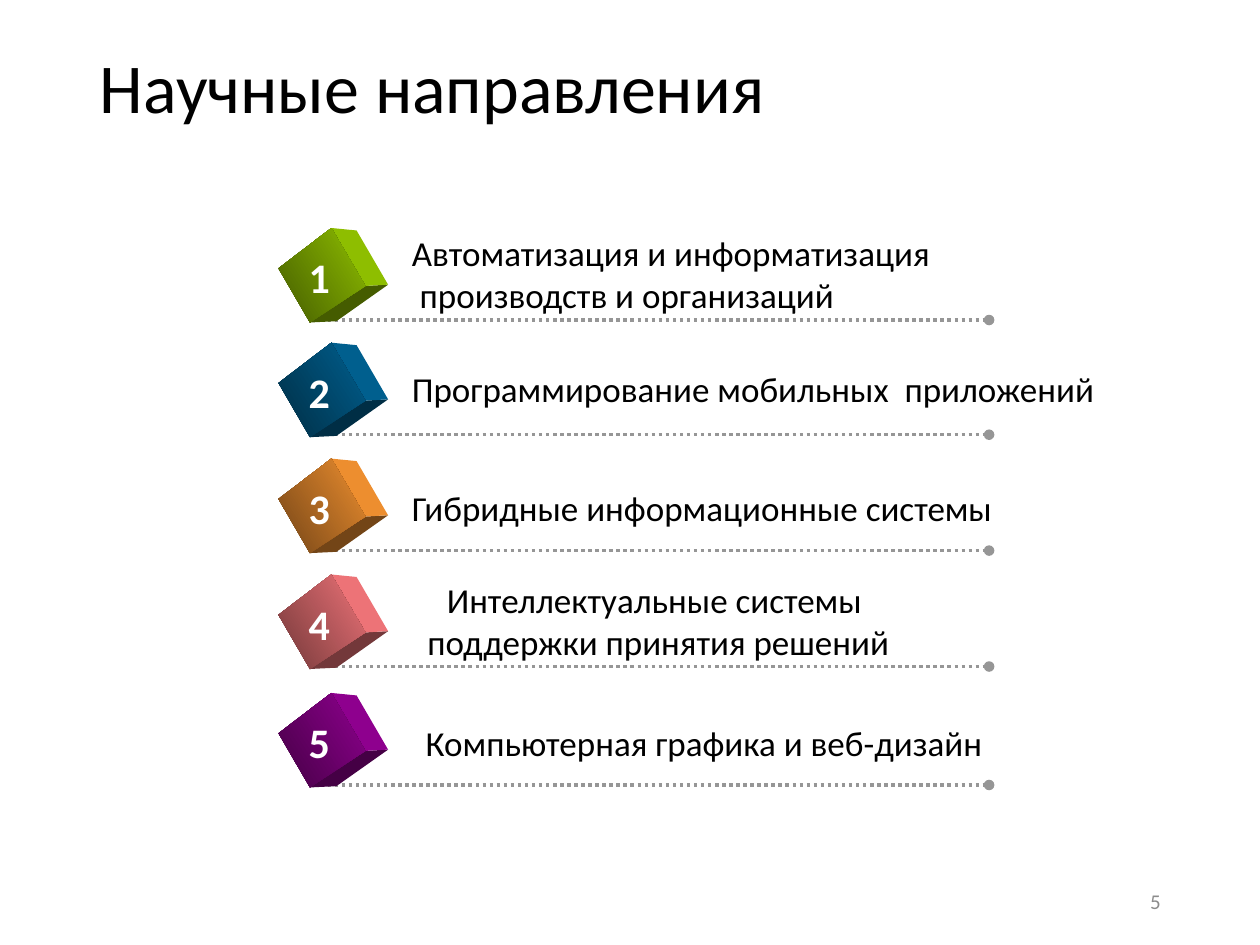
from lxml.etree import SubElement
from pptx import Presentation
from pptx.dml.color import RGBColor
from pptx.enum.dml import MSO_LINE
from pptx.enum.shapes import MSO_CONNECTOR
from pptx.enum.text import MSO_ANCHOR, PP_ALIGN
from pptx.oxml.ns import qn
from pptx.util import Inches, Pt

COLORS = {
    "text": "000000",
    "number": "FFFFFF",
    "rule": "969696",
    "footer": "8C8C8C",
    "green": "99CC00",
    "blue": "006699",
    "orange": "FF9933",
    "pink": "FF7C80",
    "purple": "990099",
}

FRONT = [(2.21, -0.41), (2.63, -0.73), (2.9, -0.27), (2.46, 0.02)]
SIDE = [(2.63, -0.73), (2.83, -0.71), (3.08, -0.28), (2.9, -0.27)]
BOTTOM = [(2.9, -0.27), (3.08, -0.28), (2.67, 0.01), (2.46, 0.02)]

DIRECTIONS = [
    ("green", 2.54, (3.17, 1.79, 4.35, 0.77), PP_ALIGN.LEFT,
     "Автоматизация и информатизация\n производств и организаций"),
    ("blue", 3.45, (3.17, 2.87, 5.66, 0.44), PP_ALIGN.LEFT,
     "Программирование мобильных  приложений"),
    ("orange", 4.37, (3.17, 3.81, 4.81, 0.44), PP_ALIGN.LEFT,
     "Гибридные информационные системы"),
    ("pink", 5.29, (3.28, 4.54, 3.89, 0.77), PP_ALIGN.CENTER,
     "Интеллектуальные системы \nподдержки принятия решений"),
    ("purple", 6.23, (3.28, 5.68, 4.65, 0.44), PP_ALIGN.LEFT,
     "Компьютерная графика и веб-дизайн"),
]


def shade(name, factor):
    channels = RGBColor.from_string(COLORS[name])
    return RGBColor(*(round(channel * factor) for channel in channels))


class SlideBuilder:
    font = "Calibri"

    def __init__(self, slide):
        self.slide = slide

    def format_text(self, frame, size, color, align, bold=False):
        for para in frame.paragraphs:
            para.alignment = align
            for span in para.runs:
                span.font.name = self.font
                span.font.size = Pt(size)
                span.font.bold = bold
                span.font.color.rgb = RGBColor.from_string(COLORS[color])

    def title(self, text, bounds):
        box = self.slide.shapes.title
        box.left, box.top, box.width, box.height = map(Inches, bounds)
        frame = box.text_frame
        frame.text = text
        frame.vertical_anchor = MSO_ANCHOR.MIDDLE
        frame.paragraphs[0].line_spacing = 0.9
        self.format_text(frame, 40, "text", PP_ALIGN.LEFT)

    def text(self, text, bounds, size, color="text", align=PP_ALIGN.LEFT,
             bold=False, wrap=False, anchor=MSO_ANCHOR.TOP):
        frame = self.slide.shapes.add_textbox(*map(Inches, bounds)).text_frame
        frame.word_wrap = wrap
        frame.vertical_anchor = anchor
        frame.text = text
        self.format_text(frame, size, color, align, bold)

    def rule(self, y):
        rule = self.slide.shapes.add_connector(
            MSO_CONNECTOR.STRAIGHT, Inches(2.6), Inches(y), Inches(7.85), Inches(y))
        rule.line.color.rgb = RGBColor.from_string(COLORS["rule"])
        rule.line.width = Pt(2)
        rule.line.dash_style = MSO_LINE.ROUND_DOT
        properties = rule._element.spPr
        SubElement(properties.find(qn("a:ln")), qn("a:tailEnd"), type="oval")
        SubElement(properties, qn("a:effectLst"))

    def face(self, corners, y, color, shades):
        points = [(Inches(x), Inches(y + offset)) for x, offset in corners]
        outline = self.slide.shapes.build_freeform(*points[0])
        outline.add_line_segments(points[1:], close=True)
        face = outline.convert_to_shape()
        face.shadow.inherit = False
        face.line.fill.background()
        if len(shades) == 1:
            face.fill.solid()
            face.fill.fore_color.rgb = shade(color, shades[0])
        else:
            face.fill.gradient()
            face.fill.gradient_angle = 33
            for stop, factor in zip(face.fill.gradient_stops, shades):
                stop.color.rgb = shade(color, factor)

    def cube(self, y, color):
        self.face(BOTTOM, y, color, [0.45])
        self.face(SIDE, y, color, [0.93])
        self.face(FRONT, y, color, [0.45, 0.93])


def main():
    deck = Presentation()
    deck.slide_width, deck.slide_height = Inches(10), Inches(7.5)
    page = SlideBuilder(deck.slides.add_slide(deck.slide_layouts[5]))
    page.title("Научные направления", (0.69, 0.18, 8.62, 1.09))
    for number, (color, y, bounds, align, label) in enumerate(DIRECTIONS, 1):
        page.rule(y)
        page.cube(y, color)
        page.text(label, bounds, 20, align=align)
        page.text(str(number), (2.35, y - 0.59, 0.39, 0.5), 24, "number", bold=True)
    page.text("5", (7.06, 6.95, 2.25, 0.4), 12, "footer", PP_ALIGN.RIGHT,
              wrap=True, anchor=MSO_ANCHOR.MIDDLE)
    deck.save("out.pptx")


if __name__ == "__main__":
    main()
